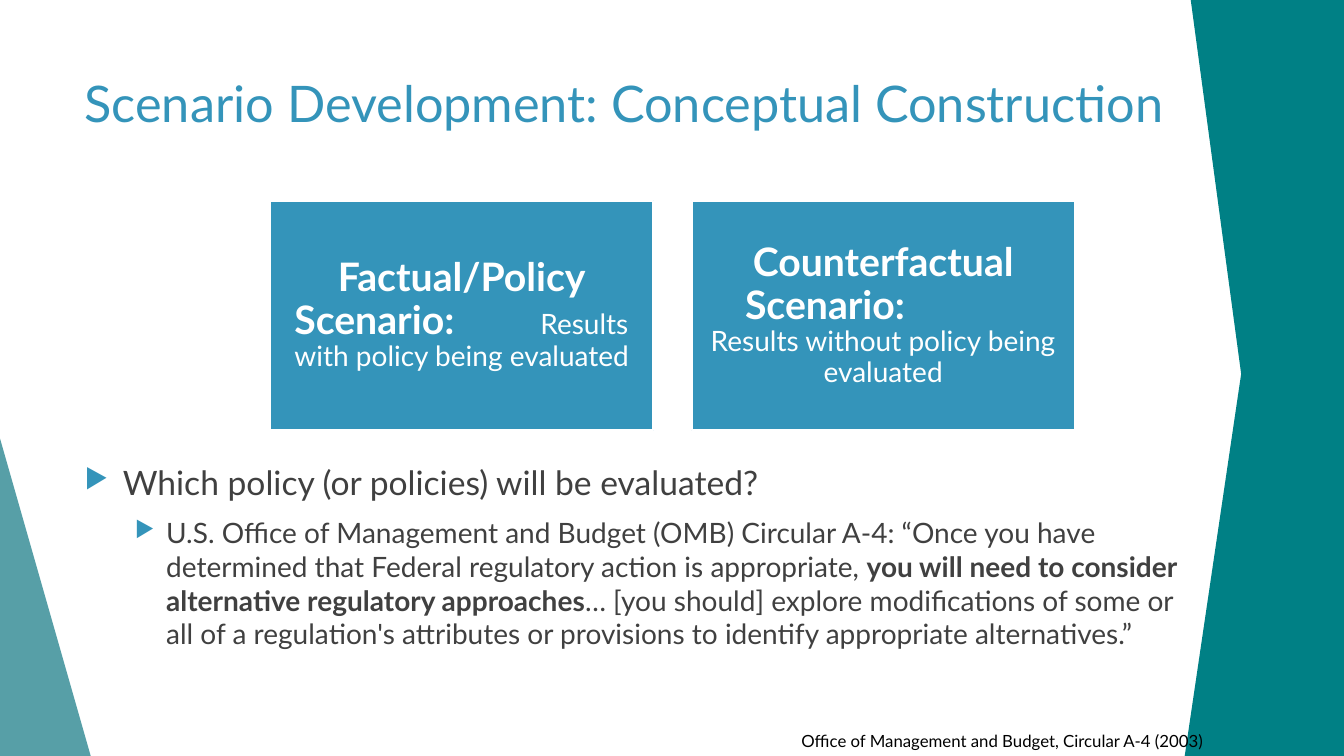
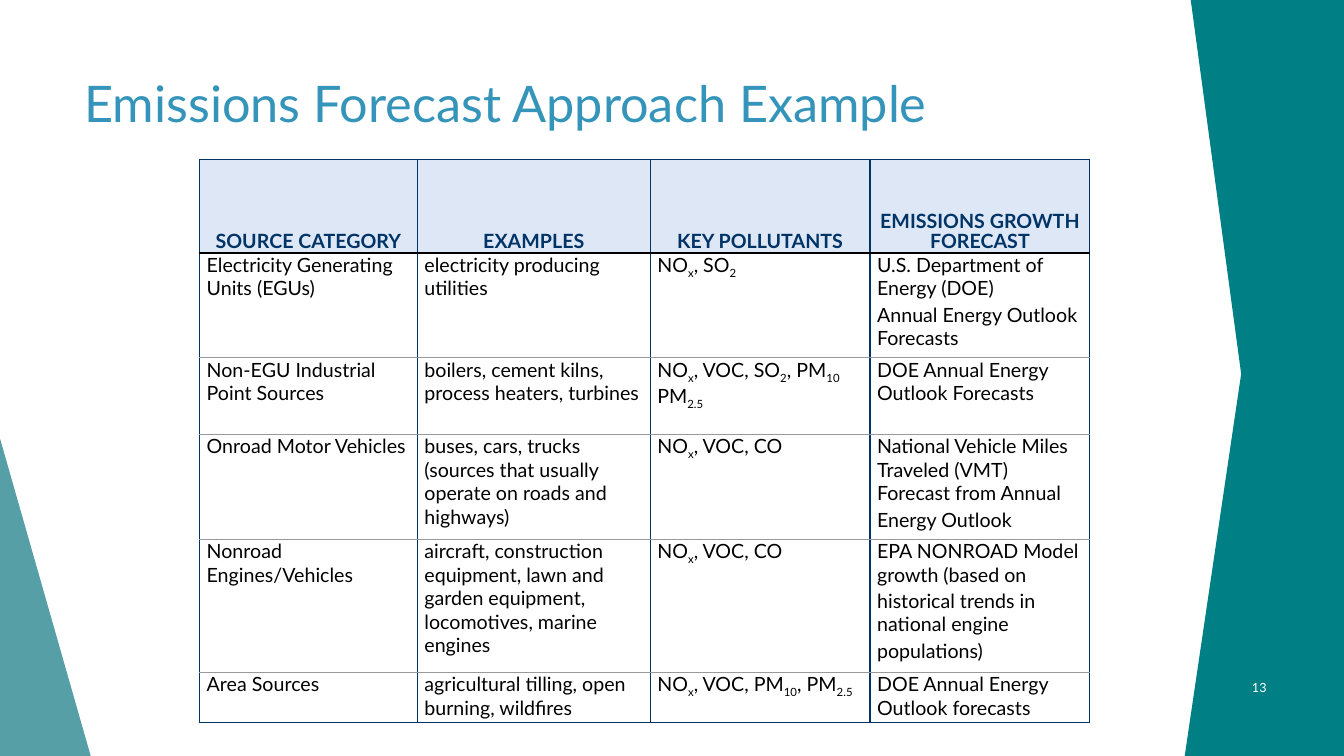
"""Builds two slides on scenario development and emissions forecasts."""
from lxml import etree
from pptx import Presentation
from pptx import util as u
from pptx.dml.color import RGBColor
from pptx.enum import shapes, text
from pptx.oxml.ns import qn

PX = 9144
FONT = "Lato"
BLUE, TEAL, SEA, NAVY = "3494BA", "008085", "3A8F98", "003366"
WHITE, BLACK, GREY, INK, PALE = "FFFFFF", "000000", "999999", "404040", "DDE7F5"
LEFT, CENTER, RIGHT = text.PP_ALIGN.LEFT, text.PP_ALIGN.CENTER, text.PP_ALIGN.RIGHT
TOP, MIDDLE, BOTTOM = text.MSO_ANCHOR.TOP, text.MSO_ANCHOR.MIDDLE, text.MSO_ANCHOR.BOTTOM

SLIDE = (1333, 750)
TITLE_AT = (74, 67, 1192, 144)
WEDGE_AT = (-2, 428, 92, 322)
BAND = [(1333, 0), (1333, 750), (1175, 750), (1231, 371), (1181, 0)]

CARD_AT, CARD_STEP = (268, 199, 380, 228), 418
HEAD = {"size": 28, "bold": True}
CARDS = [
    [
        {"runs": [("Factual/Policy", HEAD)], "align": CENTER},
        {"runs": [("\tScenario:", HEAD), ("\tResults", {})], "tabs": [12, 256]},
        {"runs": [("with policy being evaluated", {})], "align": CENTER},
    ],
    [
        {"runs": [("Counterfactual", HEAD)], "align": CENTER},
        {"runs": [("\tScenario:", HEAD)], "tabs": [41]},
        {"runs": [("Results without policy being evaluated", {})], "align": CENTER},
    ],
]

BODY_AT = (74, 453, 1114, 246)
BODY = [
    {"runs": [("Which policy (or policies) will be evaluated?", {"size": 24})], "indent": (38, -38)},
    {
        "runs": [
            ("U.S. Office of Management and Budget (OMB) Circular A-4: “Once you have determined "
             "that Federal regulatory action is appropriate, ", {}),
            ("you will need to consider alternative regulatory approaches", {"bold": True}),
            ("… [you should] explore modifications of some or all of a regulation's attributes "
             "or provisions to identify appropriate alternatives.”", {}),
        ],
        "indent": (81, -31), "level": 1, "before": 10,
    },
]
SOURCE_AT = (785, 720, 477, 30)
SOURCE = "Office of Management and Budget, Circular A-4 (2003)"

TABLE_AT = (198, 158)
COLUMNS = [216, 231, 218, 218]
ROWS = [93, 104, 76, 104, 132, 50]
TABLE = [
    ["SOURCE CATEGORY", "EXAMPLES", "KEY POLLUTANTS", "EMISSIONS GROWTH FORECAST"],
    ["Electricity Generating Units (EGUs)", "electricity producing utilities", "NO~x~, SO~2~",
     "U.S. Department of Energy (DOE)\nAnnual Energy Outlook Forecasts"],
    ["Non-EGU Industrial Point Sources", "boilers, cement kilns, process heaters, turbines",
     "NO~x~, VOC, SO~2~, PM~10~ PM~2.5~", "DOE Annual Energy Outlook Forecasts"],
    ["Onroad Motor Vehicles",
     "buses, cars, trucks (sources that usually operate on roads and highways)", "NO~x~, VOC, CO",
     "National Vehicle Miles Traveled (VMT) Forecast from Annual\nEnergy Outlook"],
    ["Nonroad Engines/Vehicles",
     "aircraft, construction equipment, lawn and garden equipment, locomotives, marine engines",
     "NO~x~, VOC, CO",
     "EPA NONROAD Model growth (based on\nhistorical trends in national engine\npopulations)"],
    ["Area Sources", "agricultural tilling, open burning, wildfires",
     "NO~x~, VOC, PM~10~, PM~2.5~", "DOE Annual Energy Outlook forecasts"],
]
NUMBER_AT = (1191, 662, 75, 40)


def rgb(code):
    return RGBColor.from_string(code)


def px(*lengths):
    return [u.Emu(length * PX) for length in lengths]


def child(parent, tag, **attributes):
    return etree.SubElement(parent, qn(tag), {key: str(value) for key, value in attributes.items()})


def add_bullet(properties, margin, hanging):
    properties.set("marL", str(margin * PX))
    properties.set("indent", str(hanging * PX))
    child(child(properties, "a:buClr"), "a:srgbClr", val=BLUE)
    child(properties, "a:buSzPct", val=80000)
    child(properties, "a:buChar", char="▶")


def write(frame, paragraphs, size, color, spacing=None):
    frame.word_wrap = True
    for index, item in enumerate(paragraphs):
        para = frame.add_paragraph() if index else frame.paragraphs[0]
        properties = para._p.get_or_add_pPr()
        if "indent" in item:
            add_bullet(properties, *item["indent"])
        if "tabs" in item:
            stops = child(properties, "a:tabLst")
            for stop in item["tabs"]:
                child(stops, "a:tab", pos=stop * PX, algn="l")
        para.level = item.get("level", 0)
        para.alignment = item.get("align", LEFT)
        para.space_before = u.Pt(item.get("before", 0))
        para.space_after = u.Pt(item.get("after", 0))
        if spacing:
            para.line_spacing = spacing
        for words, style in item["runs"]:
            span = para.add_run()
            span.text = words
            span.font.name = FONT
            span.font.size = u.Pt(style.get("size", size))
            span.font.bold = style.get("bold", False)
            span.font.color.rgb = rgb(color)
            if style.get("sub"):
                span._r.get_or_add_rPr().set("baseline", "-25000")


def add_text(page, place, paragraphs, size, color, anchor=TOP):
    frame = page.shapes.add_textbox(*px(*place)).text_frame
    frame.vertical_anchor = anchor
    write(frame, paragraphs, size, color)


def line(words, align=LEFT):
    return [{"runs": [(words, {})], "align": align}]


def paint(shape, color):
    shape.shadow.inherit = False
    shape.fill.solid()
    shape.fill.fore_color.rgb = rgb(color)
    shape.line.fill.background()


def add_page(deck, title):
    page = deck.slides.add_slide(deck.slide_layouts[6])
    wedge = page.shapes.add_shape(shapes.MSO_SHAPE.RIGHT_TRIANGLE, *px(*WEDGE_AT))
    paint(wedge, SEA)
    child(wedge._element.spPr.find(".//" + qn("a:srgbClr")), "a:alpha", val=85000)
    builder = page.shapes.build_freeform(*BAND[0], scale=PX)
    builder.add_line_segments(BAND[1:], close=True)
    paint(builder.convert_to_shape(), TEAL)
    add_text(page, TITLE_AT, line(title), 36, BLUE)
    return page


def add_card(page, index, paragraphs):
    left, top, width, height = CARD_AT
    card = page.shapes.add_shape(
        shapes.MSO_SHAPE.RECTANGLE, *px(left + index * CARD_STEP, top, width, height))
    paint(card, BLUE)
    card.line.color.rgb = rgb(WHITE)
    card.line.width = u.Pt(1.5)
    frame = card.text_frame
    frame.margin_left = frame.margin_right = frame.margin_top = frame.margin_bottom = px(12)[0]
    frame.vertical_anchor = MIDDLE
    write(frame, paragraphs, 20, WHITE, 0.9)


def add_borders(cell, top, bottom):
    side = (NAVY, 1)
    properties = cell._tc.get_or_add_tcPr()
    for tag, (color, width) in zip(("a:lnL", "a:lnR", "a:lnT", "a:lnB"), (side, side, top, bottom)):
        border = child(properties, tag, w=u.Pt(width))
        child(child(border, "a:solidFill"), "a:srgbClr", val=color)


def cell_paragraphs(words, align):
    return [
        {
            "runs": [(part, {"sub": place % 2, "bold": align == CENTER})
                     for place, part in enumerate(row.split("~")) if part],
            "align": align, "before": 1 if index else 0, "after": 1,
        }
        for index, row in enumerate(words.split("\n"))
    ]


def add_emissions_table(page):
    table = page.shapes.add_table(
        len(ROWS), len(COLUMNS), *px(*TABLE_AT, sum(COLUMNS), sum(ROWS))).table
    table.first_row = table.horz_banding = False
    for column, width in zip(table.columns, COLUMNS):
        column.width = px(width)[0]
    rules = [(NAVY, 1), (BLACK, 1.5)] + [(GREY, 1)] * (len(ROWS) - 2) + [(NAVY, 1)]
    for r, words_in_row in enumerate(TABLE):
        table.rows[r].height = px(ROWS[r])[0]
        for c, words in enumerate(words_in_row):
            cell = table.cell(r, c)
            cell.margin_left = cell.margin_right = px(7)[0]
            cell.margin_top = cell.margin_bottom = 0
            add_borders(cell, rules[r], rules[r + 1])
            if r == 0:
                cell.fill.solid()
                cell.fill.fore_color.rgb = rgb(PALE)
                cell.vertical_anchor = BOTTOM
                write(cell.text_frame, cell_paragraphs(words, CENTER), 14, NAVY, u.Pt(14.5))
            else:
                cell.fill.background()
                cell.vertical_anchor = TOP
                write(cell.text_frame, cell_paragraphs(words, LEFT), 14, BLACK)


def main():
    deck = Presentation()
    deck.slide_width, deck.slide_height = px(*SLIDE)

    page = add_page(deck, "Scenario Development: Conceptual Construction")
    add_text(page, BODY_AT, BODY, 20, INK)
    add_text(page, SOURCE_AT, line(SOURCE), 12, BLACK)
    for index, paragraphs in enumerate(CARDS):
        add_card(page, index, paragraphs)

    page = add_page(deck, "Emissions Forecast Approach Example")
    add_emissions_table(page)
    add_text(page, NUMBER_AT, line("13", RIGHT), 9, WHITE, MIDDLE)

    deck.save("out.pptx")


if __name__ == "__main__":
    main()
